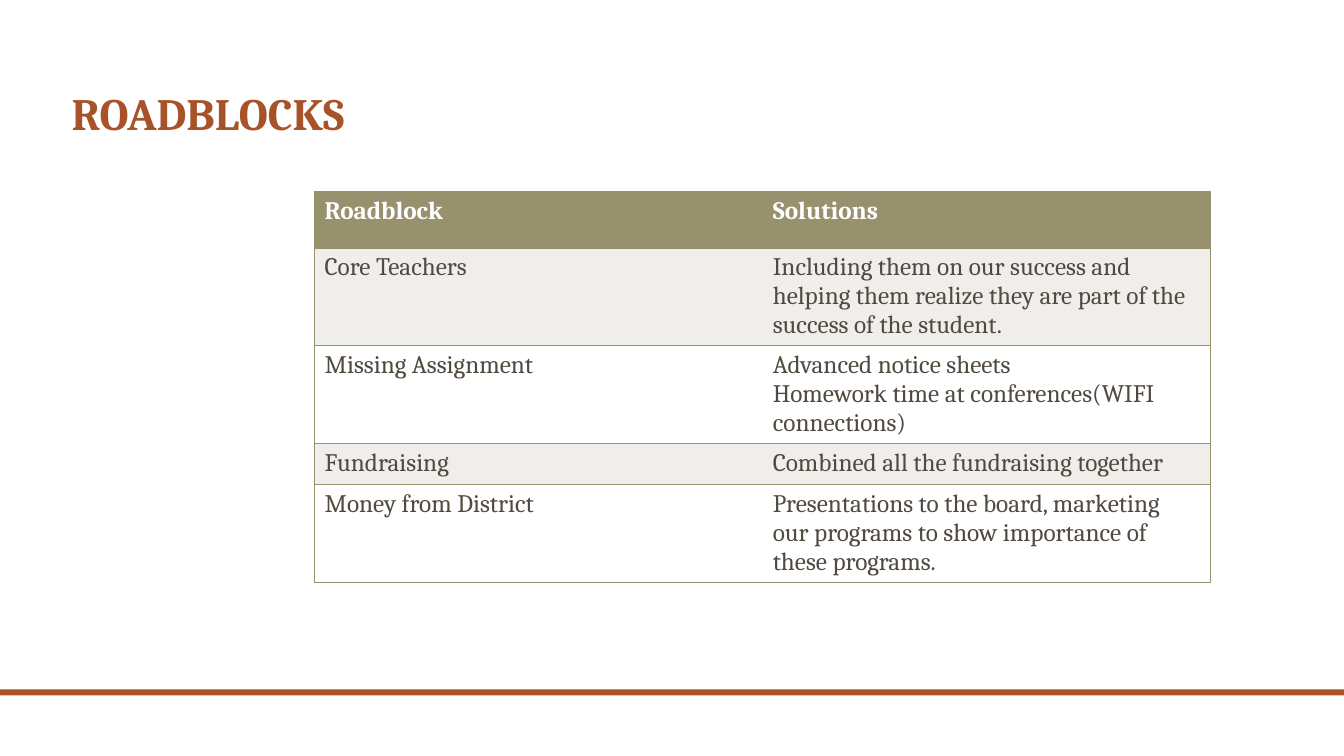
"""Build the Roadblocks slide with its table of solutions."""
from dataclasses import dataclass

from lxml.etree import SubElement
from pptx import Presentation
from pptx.dml.color import RGBColor
from pptx.enum.shapes import MSO_SHAPE
from pptx.enum.text import MSO_ANCHOR, PP_ALIGN
from pptx.oxml.ns import qn
from pptx.util import Inches, Pt


@dataclass(frozen=True)
class Theme:
    font: str = "Cambria"
    rust: str = "A85229"
    olive: str = "98916E"
    pale: str = "EFEEEB"
    white: str = "FFFFFF"
    ink: str = "514A40"
    head: int = 32
    body: int = 18


theme = Theme()


def write(frame, text, size=theme.body, color=theme.ink, bold=False, space=None):
    frame.text = text
    for para in frame.paragraphs:
        para.alignment = PP_ALIGN.LEFT
        para.line_spacing = space
        for run in para.runs:
            run.font.name = theme.font
            run.font.size = Pt(size)
            run.font.bold = bold
            run.font.color.rgb = RGBColor.from_string(color)


def border(cell, hidden):
    props = cell._tc.get_or_add_tcPr()
    for side in ("lnL", "lnR", "lnT", "lnB"):
        line = SubElement(props, qn(f"a:{side}"), w=str(Pt(1)))
        if side == hidden:
            SubElement(line, qn("a:noFill"))
        else:
            fill = SubElement(line, qn("a:solidFill"))
            SubElement(fill, qn("a:srgbClr"), val=theme.olive)


deck = Presentation()
deck.slide_width = Inches(13.33)
deck.slide_height = Inches(7.5)
slide = deck.slides.add_slide(deck.slide_layouts[5])

bar = slide.shapes.add_shape(
    MSO_SHAPE.RECTANGLE, 0, Inches(6.84), deck.slide_width, Inches(0.06))
bar.shadow.inherit = False
bar.fill.solid()
bar.fill.fore_color.rgb = RGBColor.from_string(theme.rust)
bar.line.fill.background()

title = slide.shapes.title
title.left, title.top = Inches(0.61), Inches(0.19)
title.width, title.height = Inches(10.5), Inches(1.25)
title.text_frame.word_wrap = True
title.text_frame.vertical_anchor = MSO_ANCHOR.BOTTOM
write(title.text_frame, "ROADBLOCKS", size=theme.head, color=theme.rust,
      bold=True, space=0.9)

rows = [
    (0.56, "Roadblock", "Solutions"),
    (0.97, "Core Teachers",
     "Including them on our success and helping them realize they are part "
     "of the success of the student."),
    (0.97, "Missing Assignment",
     "Advanced notice sheets\nHomework time at conferences(WIFI connections)"),
    (0.41, "Fundraising", "Combined all the fundraising together"),
    (0.97, "Money from District",
     "Presentations to the board, marketing our programs to show importance "
     "of these programs."),
]
total = sum(row[0] for row in rows)
table = slide.shapes.add_table(
    len(rows), 2, Inches(3.12), Inches(1.9), Inches(8.89), Inches(total)).table

for r, (height, *texts) in enumerate(rows):
    table.rows[r].height = Inches(height)
    top = r == 0
    shade = theme.olive if top else theme.pale if r % 2 else theme.white
    for c, text in enumerate(texts):
        cell = table.cell(r, c)
        border(cell, "lnL" if c else "lnR")
        cell.fill.solid()
        cell.fill.fore_color.rgb = RGBColor.from_string(shade)
        write(cell.text_frame, text, color=theme.white if top else theme.ink,
              bold=top)

deck.save("out.pptx")
